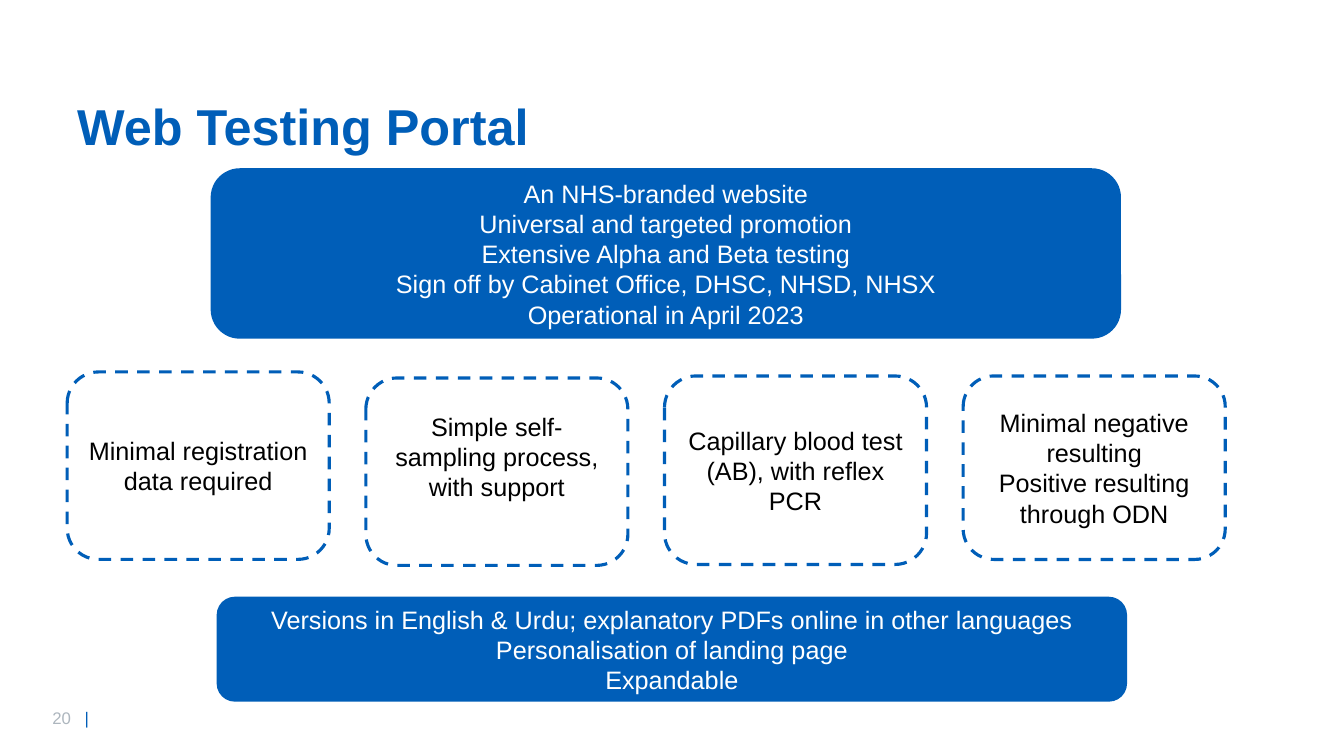
import pptx
import pptx.util
import pptx.dml.color
import pptx.enum.dml
import pptx.enum.shapes
import pptx.enum.text
from lxml import etree

COLORS = {"blue": "005EB8", "white": "FFFFFF", "black": "000000", "grey": "ADB6BE"}
ALIGN = pptx.enum.text.PP_ALIGN
ANCHOR = pptx.enum.text.MSO_ANCHOR

deck = pptx.Presentation()
deck.slide_width = pptx.util.Inches(13.33)
deck.slide_height = pptx.util.Inches(7.5)
slide = deck.slides.add_slide(deck.slide_layouts[6])

# Grid of 100 columns by 100 rows
COL = deck.slide_width / 100
ROW = deck.slide_height / 100


def add_run(paragraph, text, size, color, bold=False):
    run = paragraph.add_run()
    run.text = text
    run.font.name = "Arial"
    run.font.size = pptx.util.Pt(size)
    run.font.bold = bold
    run.font.color.rgb = pptx.dml.color.RGBColor.from_string(COLORS[color])


def add_panel(left, top, width, height, fill, text_color, line_width, lines):
    panel = slide.shapes.add_shape(
        pptx.enum.shapes.MSO_SHAPE.ROUNDED_RECTANGLE,
        int(left * COL), int(top * ROW), int(width * COL), int(height * ROW))
    panel.shadow.inherit = False
    panel.fill.solid()
    panel.fill.fore_color.rgb = pptx.dml.color.RGBColor.from_string(COLORS[fill])
    panel.line.color.rgb = pptx.dml.color.RGBColor.from_string(COLORS["blue"])
    panel.line.width = pptx.util.Pt(line_width)
    frame = panel.text_frame
    frame.word_wrap = True
    frame.vertical_anchor = ANCHOR.MIDDLE
    for i, line in enumerate(lines):
        paragraph = frame.paragraphs[0] if i == 0 else frame.add_paragraph()
        paragraph.alignment = ALIGN.CENTER
        add_run(paragraph, line, 18, text_color)
    return panel


# Page number, with a tab before the bar
page_number = slide.shapes.add_textbox(
    int(3.15 * COL), int(92.93 * ROW), int(7.05 * COL), int(4 * ROW))
page_number.text_frame.word_wrap = True
page_line = page_number.text_frame.paragraphs[0]
tabs = etree.SubElement(page_line._p.get_or_add_pPr(), pptx.oxml.ns.qn("a:tabLst"))
etree.SubElement(tabs, pptx.oxml.ns.qn("a:tab"), pos=str(int(2.4 * COL)), algn="l")
add_run(page_line, "20\t", 12, "grey")
add_run(page_line, "|", 12, "blue")

# Title
title = slide.shapes.add_textbox(
    int(5 * COL), int(12.4 * ROW), int(71.85 * COL), int(8.93 * ROW))
title.text_frame.word_wrap = True
title.text_frame.vertical_anchor = ANCHOR.BOTTOM
title.text_frame.paragraphs[0].line_spacing = 0.9
add_run(title.text_frame.paragraphs[0], "Web Testing Portal", 36, "blue", bold=True)

# Banners above and below the feature cards
banners = [
    (15.75, 22.4, 22.27, ["An NHS-branded website",
                          "Universal and targeted promotion",
                          "Extensive Alpha and Beta testing",
                          "Sign off by Cabinet Office, DHSC, NHSD, NHSX",
                          "Operational in April 2023"]),
    (16.2, 79.07, 13.6, ["Versions in English & Urdu; explanatory PDFs online in other languages",
                         "Personalisation of landing page",
                         "Expandable"]),
]
for left, top, height, lines in banners:
    add_panel(left, top, 67.58, height, "blue", "white", 1.5, lines)

# Feature cards: top, height, extra rows kept free below the text, lines
features = [
    (49.2, 24.8, 0, ["Minimal registration data required"]),
    (50, 24.8, 4, ["Simple self-sampling process, with support"]),
    (49.73, 24.93, 0, ["Capillary blood test (AB), with reflex PCR"]),
    (49.73, 24.27, 0, ["Minimal negative resulting", "Positive resulting through ODN"]),
]
CARD_PITCH = 200 / 9
for i, (top, height, free_rows, lines) in enumerate(features):
    card = add_panel(5 + i * CARD_PITCH, top, 19.5, height, "white", "black", 2.25, lines)
    card.line.dash_style = pptx.enum.dml.MSO_LINE.DASH
    card.text_frame.margin_bottom += int(free_rows * ROW)

deck.save("out.pptx")
